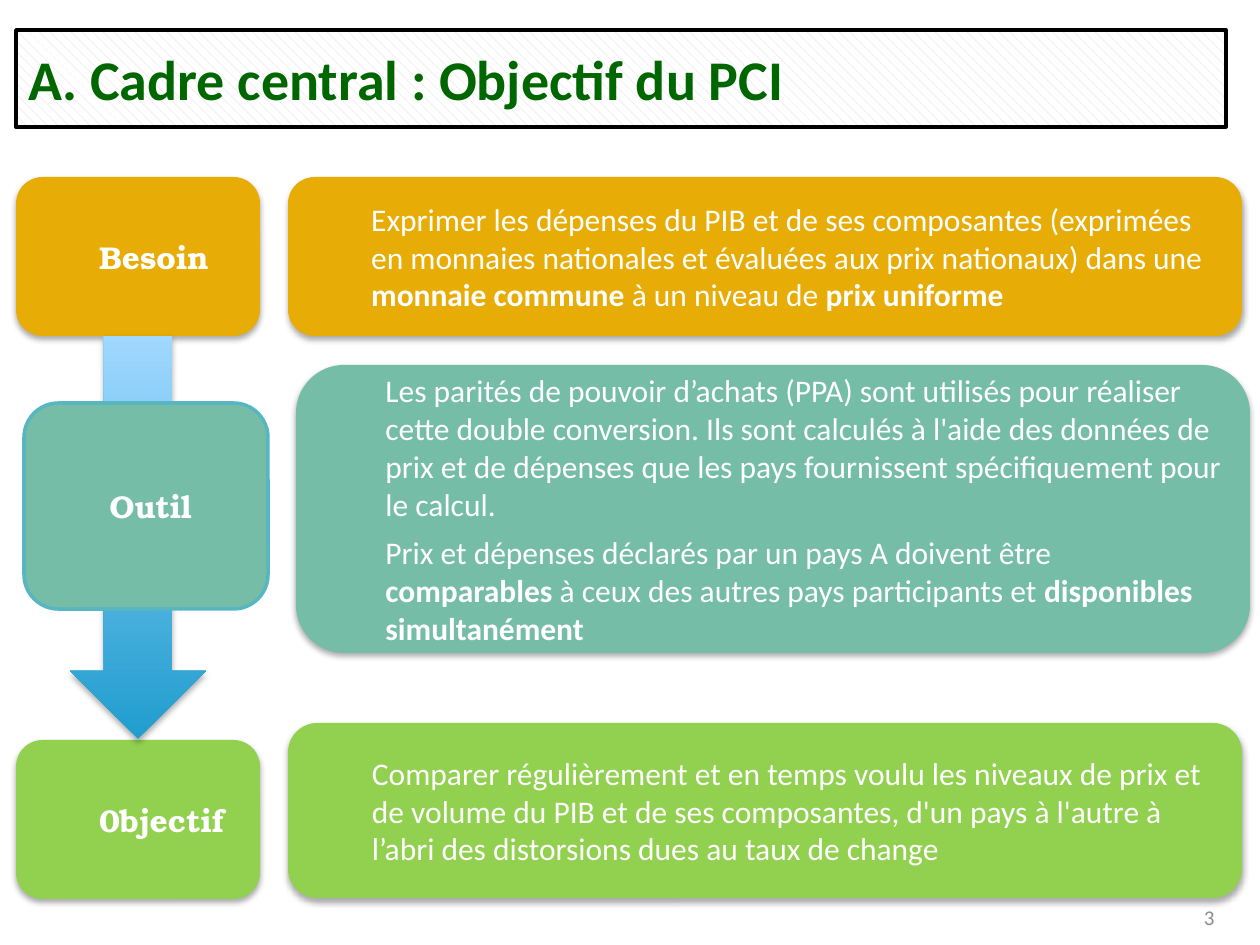
from lxml import etree
from pptx import Presentation
from pptx.dml.color import RGBColor
from pptx.enum.dml import MSO_PATTERN
from pptx.enum.shapes import MSO_SHAPE
from pptx.enum.text import MSO_ANCHOR, PP_ALIGN
from pptx.oxml.ns import qn
from pptx.util import Pt

PX = 914400 / 126
WHITE = RGBColor(0xFF, 0xFF, 0xFF)
BLACK = RGBColor(0, 0, 0)
HATCH = RGBColor(0xD9, 0xD9, 0xD9)
TITLE_GREEN = RGBColor(0, 0x66, 0)
AMBER = RGBColor(0xE7, 0xAC, 0x05)
LIME = RGBColor(0x92, 0xD0, 0x50)
TEAL = RGBColor(0x75, 0xBD, 0xA7)
TEAL_EDGE = RGBColor(0x58, 0xB6, 0xC0)
ARROW_DARK = RGBColor(0x20, 0x9D, 0xCE)
ARROW_LIGHT = RGBColor(0xA0, 0xD8, 0xFF)
GREY = RGBColor(0x8C, 0x8C, 0x8C)

BODY_FONT = {"name": "Calibri", "size": Pt(18)}
LABEL_FONT = {"name": "TeX Gyre Bonum", "size": Pt(18)}
TITLE_FONT = {"name": "Calibri", "size": Pt(32)}
NUMBER_FONT = {"name": "Calibri", "size": Pt(12)}
LABEL_WIDTH, DETAIL_WIDTH, DETAIL_OFFSET = 244, 954, 272

TITLE = "A. Cadre central : Objectif du PCI"
PAGE_NUMBER = "3"

# Paragraphs are lists of (text, bold) runs; spans are (top, height).
STEPS = [
    {"label": "Besoin", "fill": AMBER, "left": 16,
     "label_span": (177, 159), "detail_span": (177, 159),
     "detail": [[
         ("Exprimer les dépenses du PIB et de ses composantes (exprimées en "
          "monnaies nationales et évaluées aux prix nationaux) dans une ", False),
         ("monnaie commune ", True),
         ("à un niveau de ", False),
         ("prix uniforme", True)]]},
    {"label": "0bjectif", "fill": LIME, "left": 16,
     "label_span": (740, 159), "detail_span": (723, 175),
     "detail": [[
         ("Comparer régulièrement et en temps voulu les niveaux de prix et de "
          "volume du PIB et de ses composantes, d'un pays à l'autre à l’abri "
          "des distorsions dues au taux de change", False)]]},
    {"label": "Outil", "fill": TEAL, "left": 24, "edge": TEAL_EDGE,
     "label_span": (403, 206), "detail_span": (365, 288),
     "detail": [
         [("Les parités de pouvoir d’achats (PPA) sont utilisés pour réaliser "
           "cette double conversion. Ils sont calculés à l'aide des données de "
           "prix et de dépenses que les pays fournissent spécifiquement pour le "
           "calcul.", False)],
         [("Prix et dépenses déclarés par un pays A doivent être ", False),
          ("comparables ", True),
          ("à ceux des autres pays participants et ", False),
          ("disponibles simultanément", True)]]},
]


def place(box):
    return [round(length * PX) for length in box]


def add_shadow(shape):
    """Give the shape a soft shadow just below it."""
    shape.shadow.inherit = False
    effects = shape._element.spPr.find(qn("a:effectLst"))
    outer = etree.SubElement(effects, qn("a:outerShdw"), blurRad=str(Pt(3.5)),
                             dist=str(Pt(2.2)), dir="5400000", rotWithShape="0")
    colour = etree.SubElement(outer, qn("a:srgbClr"), val="000000")
    etree.SubElement(colour, qn("a:alpha"), val="32000")


def write(shape, paragraphs, font, colour, align=PP_ALIGN.LEFT, indented=False):
    frame = shape.text_frame
    frame.word_wrap = True
    frame.vertical_anchor = MSO_ANCHOR.MIDDLE
    for index, runs in enumerate(paragraphs):
        paragraph = frame.paragraphs[0] if index == 0 else frame.add_paragraph()
        paragraph.alignment = align
        if indented:
            paragraph.level = 1
            paragraph.space_after = Pt(6)
            paragraph._p.get_or_add_pPr().set("marL", str(round(63 * PX)))
        for text, bold in runs:
            run = paragraph.add_run()
            run.text = text
            for key, value in {**font, "bold": bold}.items():
                setattr(run.font, key, value)
            run.font.color.rgb = colour


def add_outlined(slide, kind, box, edge=None):
    """Add a shape that has a line if an edge colour is given, else a shadow."""
    shape = slide.shapes.add_shape(kind, *place(box))
    if edge is None:
        shape.line.fill.background()
        add_shadow(shape)
    else:
        shape.shadow.inherit = False
        shape.line.color.rgb = edge
        shape.line.width = Pt(2)
    return shape


def add_card(slide, box, fill, paragraphs, font, edge=None):
    card = add_outlined(slide, MSO_SHAPE.ROUNDED_RECTANGLE, box, edge)
    card.fill.solid()
    card.fill.fore_color.rgb = fill
    write(card, paragraphs, font, WHITE, indented=True)


def add_step(slide, step):
    left, fill = step["left"], step["fill"]
    top, height = step["label_span"]
    add_card(slide, (left, top, LABEL_WIDTH, height), fill,
             [[(step["label"], True)]], LABEL_FONT, step.get("edge"))
    top, height = step["detail_span"]
    add_card(slide, (left + DETAIL_OFFSET, top, DETAIL_WIDTH, height), fill,
             step["detail"], BODY_FONT)


def add_arrow(slide):
    arrow = add_outlined(slide, MSO_SHAPE.DOWN_ARROW, (70, 336, 136, 403))
    arrow.fill.gradient()
    arrow.fill.gradient_angle = 90
    for stop, colour in zip(arrow.fill.gradient_stops, (ARROW_DARK, ARROW_LIGHT)):
        stop.color.rgb = colour


def add_title(slide):
    title = add_outlined(slide, MSO_SHAPE.RECTANGLE, (16, 30, 1210, 97), BLACK)
    title.fill.patterned()
    title.fill.pattern = MSO_PATTERN.DASHED_DOWNWARD_DIAGONAL
    title.fill.fore_color.rgb = HATCH
    title.fill.back_color.rgb = WHITE
    write(title, [[(TITLE, True)]], TITLE_FONT, TITLE_GREEN)


def main():
    presentation = Presentation()
    presentation.slide_width, presentation.slide_height = place((1260, 945))
    slide = presentation.slides.add_slide(presentation.slide_layouts[6])
    number = slide.shapes.add_textbox(*place((934, 901, 293, 32)))
    write(number, [[(PAGE_NUMBER, False)]], NUMBER_FONT, GREY, PP_ALIGN.RIGHT)
    need, goal, tool = STEPS
    add_step(slide, need)
    add_step(slide, goal)
    add_arrow(slide)
    add_step(slide, tool)
    add_title(slide)
    presentation.save("out.pptx")


if __name__ == "__main__":
    main()
